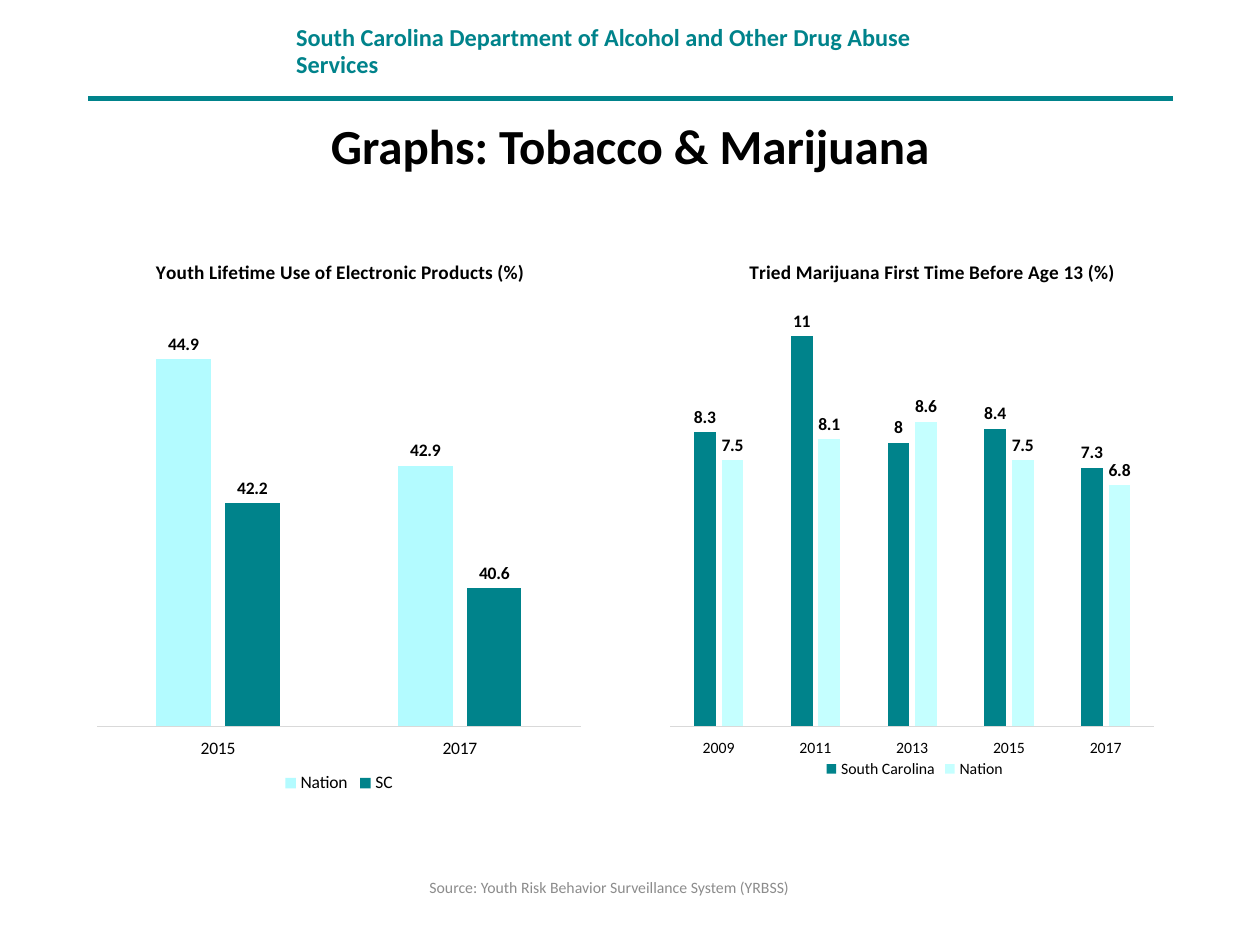
"""Build the slide comparing youth tobacco and marijuana use."""
from dataclasses import dataclass

from lxml.etree import SubElement
from pptx import Presentation
from pptx.chart.data import CategoryChartData
from pptx.dml.color import RGBColor
from pptx.enum.chart import XL_CHART_TYPE as ChartType
from pptx.enum.chart import XL_LABEL_POSITION as LabelPos
from pptx.enum.chart import XL_LEGEND_POSITION as LegendPos
from pptx.enum.chart import XL_TICK_LABEL_POSITION as TickLabelPos
from pptx.enum.chart import XL_TICK_MARK as TickMark
from pptx.enum.shapes import MSO_CONNECTOR as Connector
from pptx.enum.text import MSO_ANCHOR as Anchor
from pptx.enum.text import PP_ALIGN as Align
from pptx.oxml import parse_xml
from pptx.oxml.ns import nsdecls, qn
from pptx.util import Inches, Pt


@dataclass(frozen=True)
class Theme:
    font: str = "Calibri"
    teal: str = "00838B"
    aqua: str = "B3FBFF"
    pale: str = "C5FFFF"
    black: str = "000000"
    gray: str = "8C8C8C"
    axis: str = "D9D9D9"
    heading: float = 28
    banner: float = 13.9
    chart_title: float = 11
    label: float = 10
    small: float = 9


@dataclass(frozen=True)
class Label:
    text: str
    box: tuple
    size: float
    color: str
    bold: bool = True
    align: Align = Align.LEFT
    anchor: Anchor = Anchor.MIDDLE
    inset: tuple = (0.06, 0.03)
    spacing: float = 0.9


@dataclass(frozen=True)
class Series:
    name: str
    values: tuple
    color: str


@dataclass(frozen=True)
class BarChart:
    title: str
    left: float
    years: tuple
    series: tuple
    scale: tuple
    text_size: float
    title_at: tuple
    legend_at: tuple


THEME = Theme()
COLS, ROWS = 100, 75
CELL = Inches(0.1)
CHART_TOP, CHART_WIDTH, CHART_HEIGHT = 18.5, 40, 45
PLOT_AREA = (0.02, 0.12, 0.96, 0.75)

LABELS = (
    Label("South Carolina Department of Alcohol and Other Drug Abuse Services",
          (22.9, 1, 54.1, 6.3), THEME.banner, THEME.teal),
    Label("Graphs: Tobacco & Marijuana", (6.9, 8.9, 86.2, 5.8),
          THEME.heading, THEME.black, align=Align.CENTER),
    Label("Source: Youth Risk Behavior Surveillance System (YRBSS)",
          (33.1, 69.5, 33.8, 3.3), THEME.small, THEME.gray, bold=False,
          anchor=Anchor.TOP, inset=(0.1, 0.02), spacing=1),
)
CHARTS = (
    BarChart("Youth Lifetime Use of Electronic Products (%)", 6.9,
             ("2015", "2017"),
             (Series("Nation", (44.9, 42.9), THEME.aqua),
              Series("SC", (42.2, 40.6), THEME.teal)),
             (38, 46), THEME.label, (0.13, 0.04), (0.38, 0.95, 0.24, 0.05)),
    BarChart("Tried Marijuana First Time Before Age 13 (%)", 52.4,
             ("2009", "2011", "2013", "2015", "2017"),
             (Series("South Carolina", (8.3, 11, 8, 8.4, 7.3), THEME.teal),
              Series("Nation", (7.5, 8.1, 8.6, 7.5, 6.8), THEME.pale)),
             (0, 12), THEME.small, (0.17, 0.04), (0.32, 0.92, 0.37, 0.05)),
)


def grid(*cells: float) -> list:
    """Turn grid columns and rows into lengths."""
    return [int(CELL * n) for n in cells]


def set_font(font, size: float, color: str, bold: bool = False) -> None:
    """Apply the theme typeface with a size, colour and weight."""
    font.name, font.size, font.bold = THEME.font, Pt(size), bold
    font.color.rgb = RGBColor.from_string(color)


def add_label(slide, label: Label) -> None:
    """Draw one text box."""
    tf = slide.shapes.add_textbox(*grid(*label.box)).text_frame
    tf.word_wrap, tf.vertical_anchor = True, label.anchor
    tf.margin_left = tf.margin_right = Inches(label.inset[0])
    tf.margin_top = tf.margin_bottom = Inches(label.inset[1])
    p = tf.paragraphs[0]
    p.alignment, p.line_spacing = label.align, label.spacing
    r = p.add_run()
    r.text = label.text
    set_font(r.font, label.size, label.color, label.bold)


def add_rule(slide) -> None:
    """Draw the line below the banner."""
    line = slide.shapes.add_connector(Connector.STRAIGHT, *grid(7, 7.8, 93.1, 7.8))
    line.line.color.rgb = RGBColor.from_string(THEME.teal)
    line.line.width = Pt(2.75)
    SubElement(line.element.spPr, qn("a:effectLst"))


def place(part, index: int, shares: tuple, target: str = "") -> None:
    """Fix a chart part at shares of the chart's size."""
    for old in part.findall(qn("c:layout")):
        part.remove(old)
    inner = f'<c:layoutTarget val="{target}"/>' if target else ""
    modes = '<c:xMode val="edge"/><c:yMode val="edge"/>'
    sizes = "".join(f'<c:{k} val="{v}"/>' for k, v in zip("xywh", shares))
    part.insert(index, parse_xml(
        f'<c:layout {nsdecls("c")}><c:manualLayout>{inner}{modes}{sizes}'
        "</c:manualLayout></c:layout>"))


def add_bars(slide, item: BarChart) -> None:
    """Draw one clustered column chart."""
    data = CategoryChartData()
    data.categories = item.years
    for series in item.series:
        data.add_series(series.name, series.values)
    frame = grid(item.left, CHART_TOP, CHART_WIDTH, CHART_HEIGHT)
    chart = slide.shapes.add_chart(ChartType.COLUMN_CLUSTERED, *frame, data).chart
    set_font(chart.font, THEME.label, THEME.black)

    r = chart.chart_title.text_frame.paragraphs[0].add_run()
    r.text = item.title
    set_font(r.font, THEME.chart_title, THEME.black, True)
    chart.has_legend = True
    chart.legend.position = LegendPos.BOTTOM
    chart.legend.include_in_layout = False
    set_font(chart.legend.font, item.text_size, THEME.black)

    years, values = chart.category_axis, chart.value_axis
    years.major_tick_mark = years.minor_tick_mark = TickMark.NONE
    years.tick_label_position = TickLabelPos.LOW
    years.format.line.color.rgb = RGBColor.from_string(THEME.axis)
    years.format.line.width = Pt(0.75)
    set_font(years.tick_labels.font, item.text_size, THEME.black)
    values.minimum_scale, values.maximum_scale = item.scale
    values.has_major_gridlines = values.visible = False

    plot = chart.plots[0]
    plot.gap_width, plot.overlap, plot.vary_by_categories = 219, -27, False
    for bars, series in zip(plot.series, item.series):
        bars.format.fill.solid()
        bars.format.fill.fore_color.rgb = RGBColor.from_string(series.color)
        labels = bars.data_labels
        labels.show_value, labels.position = True, LabelPos.OUTSIDE_END
        set_font(labels.font, THEME.label, THEME.black, True)

    body = chart.element.find(qn("c:chart"))
    place(body.find(qn("c:title")), 1, item.title_at)
    place(body.find(qn("c:plotArea")), 0, PLOT_AREA, "inner")
    place(body.find(qn("c:legend")), 1, item.legend_at)


def main() -> None:
    """Assemble and save the slide."""
    prs = Presentation()
    prs.slide_width, prs.slide_height = grid(COLS, ROWS)
    slide = prs.slides.add_slide(prs.slide_layouts[6])
    add_rule(slide)
    for label in LABELS:
        add_label(slide, label)
    for item in CHARTS:
        add_bars(slide, item)
    prs.save("out.pptx")


if __name__ == "__main__":
    main()
